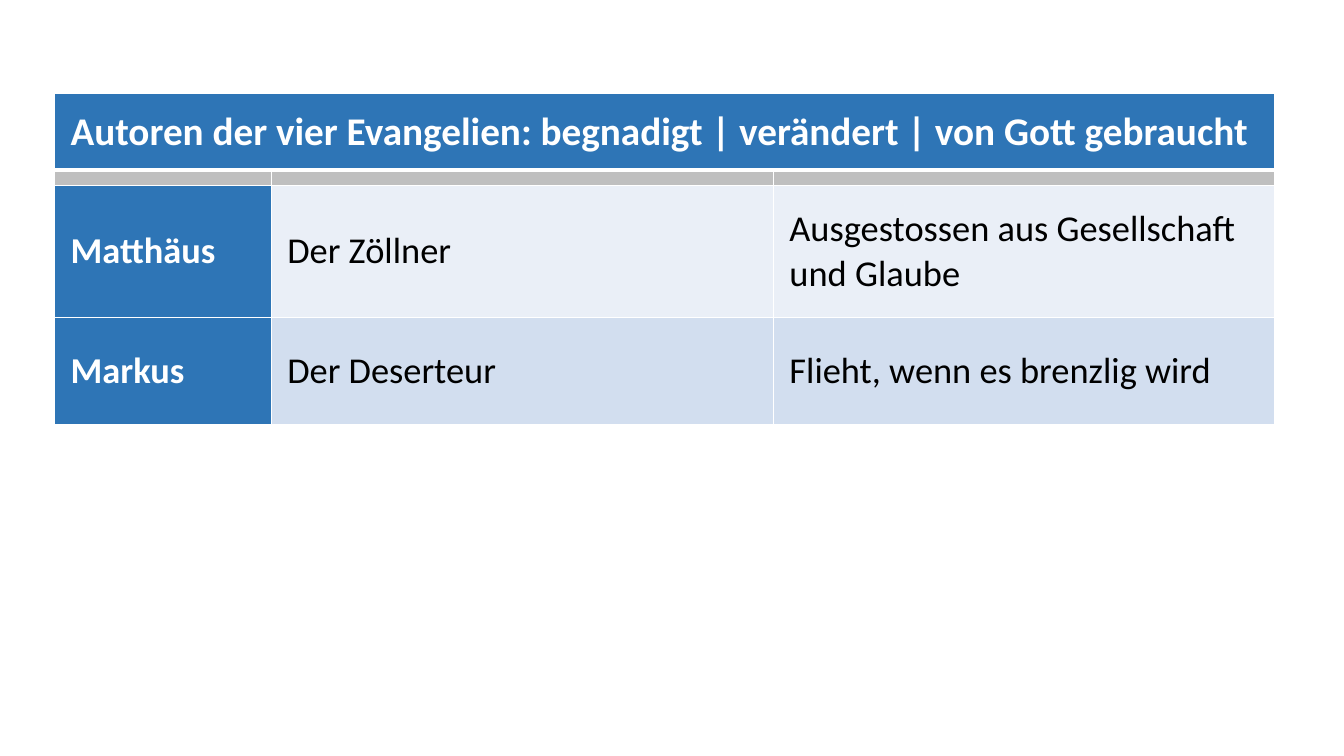
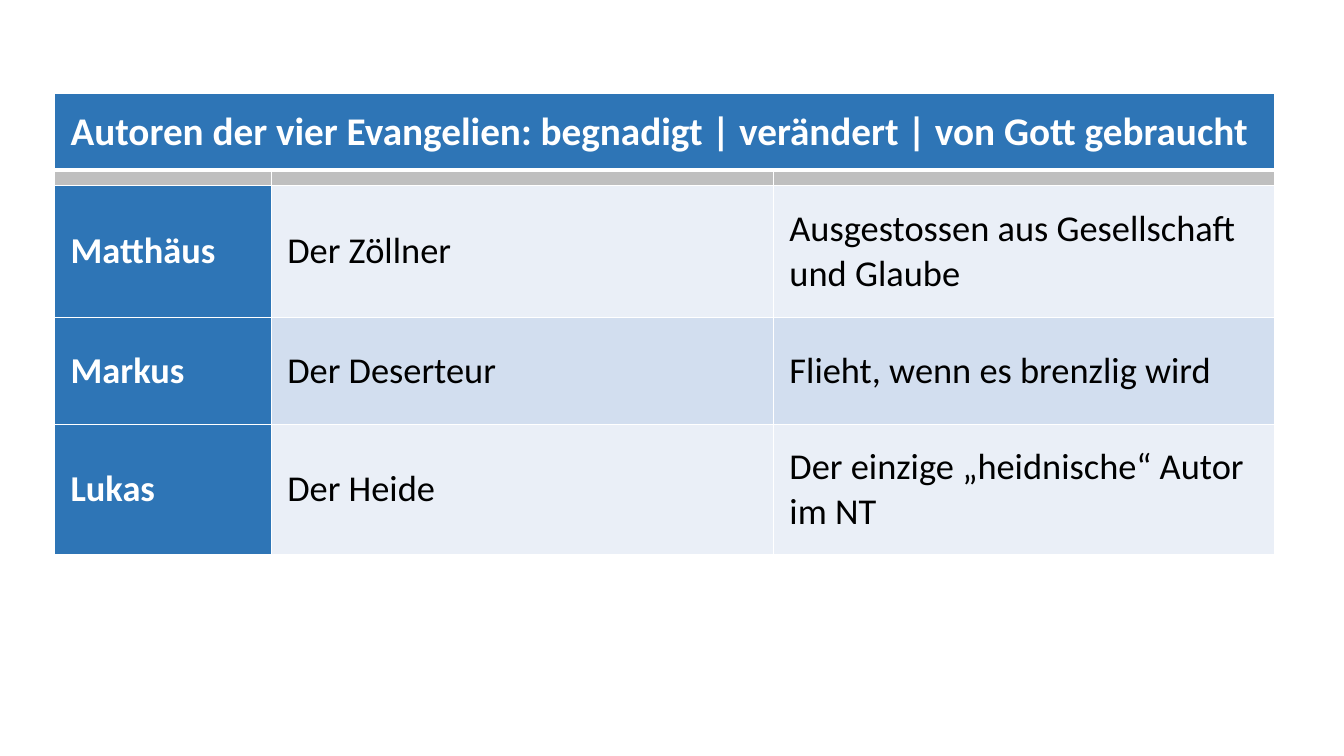
"""Build two slides that reveal a table of the gospel authors row by row."""
from dataclasses import dataclass

from lxml import etree
from pptx import Presentation
from pptx import util as u
from pptx.dml.color import RGBColor
from pptx.enum import text
from pptx.oxml import ns
from pptx.slide import Slide
from pptx.table import Table, _Cell

FONT = "Calibri"
WHITE, BLACK, BLUE, GREY = "FFFFFF", "000000", "2E75B6", "BFBFBF"
BANDS = ("EAEFF7", "D2DEEF")
LEFT, TOP = 0.54, 0.93
COLUMNS = (2.15, 4.98, 4.97)
HEADER_HEIGHT, DIVIDER_HEIGHT = 0.76, 0.15
SIDE_MARGIN = 0.16
THIN, THICK = 1, 3
HEADER = "Autoren der vier Evangelien: begnadigt | verändert | von Gott gebraucht"


@dataclass(frozen=True)
class Author:
    """One author row of the table."""
    name: str
    role: str
    remark: str
    height: float


@dataclass(frozen=True)
class CellStyle:
    """Look of one kind of cell."""
    fill: str
    color: str = WHITE
    size: int = 26
    bold: bool = True
    align: text.PP_ALIGN = text.PP_ALIGN.LEFT
    top: int = THIN
    bottom: int = THIN


AUTHORS = (
    Author("Matthäus", "Der Zöllner", "Ausgestossen aus Gesellschaft\nund Glaube", 1.31),
    Author("Markus", "Der Deserteur", "Flieht, wenn es brenzlig wird", 1.06),
    Author("Lukas", "Der Heide", "Der einzige „heidnische“ Autor\nim NT", 1.29),
)
HEADER_STYLE = CellStyle(BLUE, size=28, align=text.PP_ALIGN.JUSTIFY, bottom=THICK)
DIVIDER_STYLE = CellStyle(GREY, size=4, top=THICK)
NAME_STYLE = CellStyle(BLUE)
BODY_STYLES = tuple(CellStyle(band, BLACK, bold=False) for band in BANDS)


def rgb(code: str) -> RGBColor:
    """Turn a hex string into a colour."""
    return RGBColor.from_string(code)


def add_borders(cell: _Cell, style: CellStyle) -> None:
    """Draw white lines on the four sides of a cell."""
    properties = cell._tc.get_or_add_tcPr()
    sides = (("a:lnL", THIN), ("a:lnR", THIN), ("a:lnT", style.top), ("a:lnB", style.bottom))
    for index, (side, width) in enumerate(sides):
        line = etree.Element(ns.qn(side), w=str(u.Pt(width)))
        fill = etree.SubElement(line, ns.qn("a:solidFill"))
        etree.SubElement(fill, ns.qn("a:srgbClr"), val=WHITE)
        properties.insert(index, line)


def format_cell(cell: _Cell, content: str, style: CellStyle) -> None:
    """Write and style a single cell."""
    cell.fill.solid()
    cell.fill.fore_color.rgb = rgb(style.fill)
    add_borders(cell, style)
    cell.vertical_anchor = text.MSO_ANCHOR.MIDDLE
    cell.margin_left = cell.margin_right = u.Inches(SIDE_MARGIN)
    cell.margin_top = cell.margin_bottom = 0
    cell.text_frame.text = content
    for para in cell.text_frame.paragraphs:
        para.alignment = style.align
        para.font.name = FONT
        para.font.size = u.Pt(style.size)
        para.font.bold = style.bold
        para.font.color.rgb = rgb(style.color)
        if not content:
            etree.SubElement(para._p, ns.qn("a:endParaRPr"), sz=str(style.size * 100))


def fill_row(table: Table, row: int, contents: tuple[str, ...],
             styles: tuple[CellStyle, ...]) -> None:
    """Write one row of the table."""
    for column, (content, style) in enumerate(zip(contents, styles)):
        format_cell(table.cell(row, column), content, style)


def add_author_table(page: Slide, authors: tuple[Author, ...]) -> None:
    """Add the table with header, divider and author rows."""
    heights = (HEADER_HEIGHT, DIVIDER_HEIGHT, *(author.height for author in authors))
    table = page.shapes.add_table(
        len(heights), len(COLUMNS), u.Inches(LEFT), u.Inches(TOP),
        u.Inches(sum(COLUMNS)), u.Inches(sum(heights))).table
    table.first_row = table.horz_banding = False
    for column, width in zip(table.columns, COLUMNS):
        column.width = u.Inches(width)
    for row, height in zip(table.rows, heights):
        row.height = u.Inches(height)

    fill_row(table, 0, (HEADER, "", ""), (HEADER_STYLE,) * len(COLUMNS))
    table.cell(0, 0).merge(table.cell(0, len(COLUMNS) - 1))
    fill_row(table, 1, ("",) * len(COLUMNS), (DIVIDER_STYLE,) * len(COLUMNS))
    for index, author in enumerate(authors):
        body = BODY_STYLES[index % len(BODY_STYLES)]
        fill_row(table, index + 2, (author.name, author.role, author.remark),
                 (NAME_STYLE, body, body))


def main() -> None:
    """Build and save the deck."""
    deck = Presentation()
    deck.slide_width, deck.slide_height = u.Inches(13.33), u.Inches(7.5)
    blank = deck.slide_layouts.get_by_name("Blank")
    for shown in (2, 3):
        add_author_table(deck.slides.add_slide(blank), AUTHORS[:shown])
    deck.save("out.pptx")


if __name__ == "__main__":
    main()
